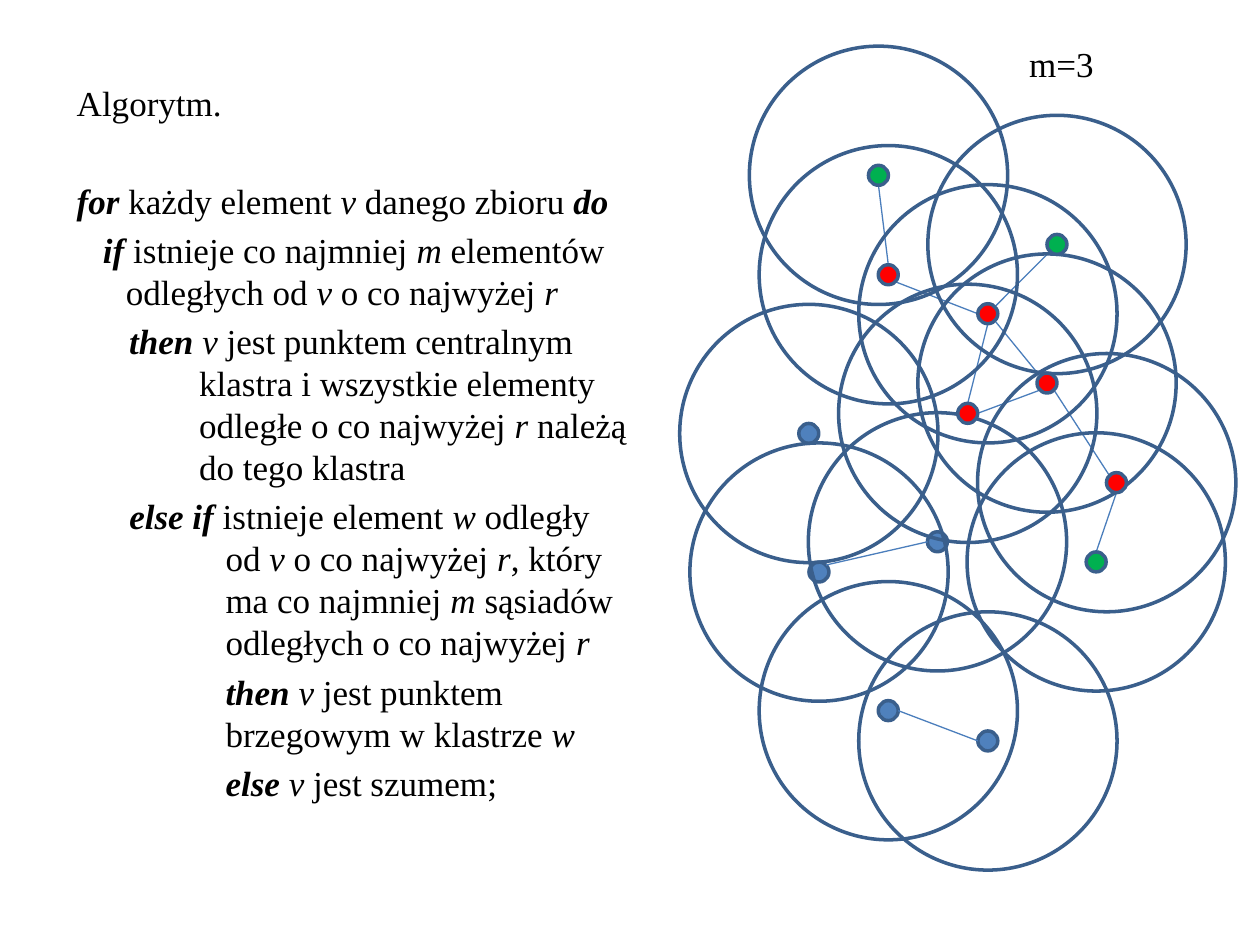
from collections import namedtuple
from math import sqrt

from lxml.etree import SubElement
from pptx import Presentation
from pptx.dml.color import RGBColor
from pptx.enum.shapes import MSO_CONNECTOR as Connector, MSO_SHAPE as Shape
from pptx.oxml.ns import qn
from pptx.util import Pt

BLACK = RGBColor(0x00, 0x00, 0x00)
BLUE = RGBColor(0x4F, 0x81, 0xBD)
RED = RGBColor(0xFF, 0x00, 0x00)
GREEN = RGBColor(0x00, 0xB0, 0x50)
OUTLINE = RGBColor(0x3A, 0x5F, 0x8C)
LINK = RGBColor(0x4B, 0x7E, 0xBC)

FONT = "Times New Roman"
FONT_SIZE = 20
DOT_RADIUS = 5.7
RING_RADIUS = 73.8

Box = namedtuple("Box", "left top width height")
Line = namedtuple("Line", "margin first_line space_before runs")
Point = namedtuple("Point", "x y color ring_shift", defaults=(0,))

PLAIN, ITALIC, STRONG = (False, False), (False, True), (True, True)

ALGORITHM = [
    Line(0, 0, 4, [("Algorytm.", PLAIN)]),
    Line(0, 0, 32, [
        ("for", STRONG), (" każdy element ", PLAIN), ("v", ITALIC),
        (" danego zbioru ", PLAIN), ("do", STRONG)]),
    Line(28, 15, 4, [
        ("if ", STRONG), ("istnieje co najmniej ", PLAIN), ("m", ITALIC),
        (" elementów odległych od ", PLAIN), ("v", ITALIC),
        (" o co najwyżej ", PLAIN), ("r", ITALIC)]),
    Line(70, 30, 4, [
        ("then ", STRONG), ("v", ITALIC),
        (" jest punktem centralnym klastra i wszystkie elementy odległe o co najwyżej ", PLAIN),
        ("r", ITALIC), (" należą do tego klastra", PLAIN)]),
    Line(85, 30, 4, [
        ("else if ", STRONG), ("istnieje element ", PLAIN), ("w", ITALIC),
        (" odległy od ", PLAIN), ("v", ITALIC), (" o co najwyżej ", PLAIN),
        ("r", ITALIC), (", który ma co najmniej ", PLAIN), ("m", ITALIC),
        (" sąsiadów odległych o co najwyżej ", PLAIN), ("r", ITALIC)]),
    Line(85, 85, 4, [
        ("then ", STRONG), ("v", ITALIC),
        (" jest punktem brzegowym w klastrze ", PLAIN), ("w", ITALIC)]),
    Line(85, 85, 4, [
        ("else ", STRONG), ("v", ITALIC), (" jest szumem;", PLAIN)]),
]

POINTS = {
    "border_top": Point(114, 74.2, GREEN),
    "core_top": Point(119.6, 131, RED),
    "border_right": Point(216, 113.7, GREEN),
    "core_hub": Point(176.5, 153.3, RED),
    "core_middle": Point(210.3, 192.9, RED),
    "core_left": Point(165, 210.2, RED),
    "core_low": Point(250, 249.8, RED, -5.6),
    "border_low": Point(238.4, 295.1, GREEN),
    "noise_alone": Point(74.2, 221.7, BLUE),
    "noise_center": Point(147.7, 283.6, BLUE),
    "noise_left": Point(80, 300.9, BLUE),
    "noise_bottom_right": Point(176.5, 397.4, BLUE),
    "noise_bottom_left": Point(119.6, 380.1, BLUE),
}

LINKS = [
    ("core_middle", "NW", "core_hub", "SE"),
    ("border_low", "N", "core_low", "S"),
    ("core_top", "N", "border_top", "S"),
    ("core_left", "E", "core_middle", "SW"),
    ("noise_bottom_left", "E", "noise_bottom_right", "W"),
    ("border_right", "SW", "core_hub", "NE"),
    ("core_top", "SE", "core_hub", "W"),
    ("noise_center", "W", "noise_left", "NE"),
    ("core_hub", "S", "core_left", "N"),
    ("core_middle", "SE", "core_low", "NW"),
]


def add_run(paragraph, text, style):
    run = paragraph.add_run()
    run.text = text
    run.font.name = FONT
    run.font.size = Pt(FONT_SIZE)
    run.font.color.rgb = BLACK
    run.font.bold, run.font.italic = style


def add_text_frame(slide, box, wrap):
    text_frame = slide.shapes.add_textbox(*map(Pt, box)).text_frame
    text_frame.word_wrap = wrap
    return text_frame


def add_algorithm(slide, box):
    text_frame = add_text_frame(slide, box, True)
    for index, line in enumerate(ALGORITHM):
        paragraph = text_frame.add_paragraph() if index else text_frame.paragraphs[0]
        paragraph.space_before = Pt(line.space_before)
        properties = paragraph._p.get_or_add_pPr()
        properties.set("marL", str(Pt(line.margin)))
        properties.set("indent", str(Pt(line.first_line - line.margin)))
        for text, style in line.runs:
            add_run(paragraph, text, style)


def add_label(slide, box):
    add_run(add_text_frame(slide, box, False).paragraphs[0], "m=3", PLAIN)


def add_circle(slide, x, y, radius, color=None):
    circle = slide.shapes.add_shape(
        Shape.OVAL, Pt(x - radius), Pt(y - radius), Pt(2 * radius), Pt(2 * radius))
    circle.shadow.inherit = False
    if color is None:
        circle.fill.background()
    else:
        circle.fill.solid()
        circle.fill.fore_color.rgb = color
    circle.line.color.rgb = OUTLINE
    circle.line.width = Pt(2)


def dot_edge(box, name, side):
    point = POINTS[name]
    reach = DOT_RADIUS / sqrt(len(side))
    x = box.left + point.x + reach * (("E" in side) - ("W" in side))
    y = box.top + point.y + reach * (("S" in side) - ("N" in side))
    return Pt(x), Pt(y)


def add_link(slide, box, start, start_side, end, end_side):
    link = slide.shapes.add_connector(
        Connector.STRAIGHT, *dot_edge(box, start, start_side), *dot_edge(box, end, end_side))
    link.line.color.rgb = LINK
    link.line.width = Pt(0.75)
    SubElement(link._element.spPr, qn("a:effectLst"))


def add_dots(slide, box, colors):
    for point in POINTS.values():
        if point.color in colors:
            add_circle(slide, box.left + point.x, box.top + point.y, DOT_RADIUS, point.color)


def add_cluster_diagram(slide, box):
    add_dots(slide, box, [BLUE])
    for link in LINKS:
        add_link(slide, box, *link)
    for point in POINTS.values():
        add_circle(slide, box.left + point.x + point.ring_shift, box.top + point.y, RING_RADIUS)
    add_dots(slide, box, [RED, GREEN])


def main():
    presentation = Presentation()
    presentation.slide_width = Pt(720)
    presentation.slide_height = Pt(540)
    slide = presentation.slides.add_slide(presentation.slide_layouts[6])
    add_algorithm(slide, Box(36.8, 43.2, 329, 430.6))
    add_cluster_diagram(slide, Box(388, 26, 318, 471))
    add_label(slide, Box(581, 20.9, 51.8, 31.7))
    presentation.save("out.pptx")


if __name__ == "__main__":
    main()
